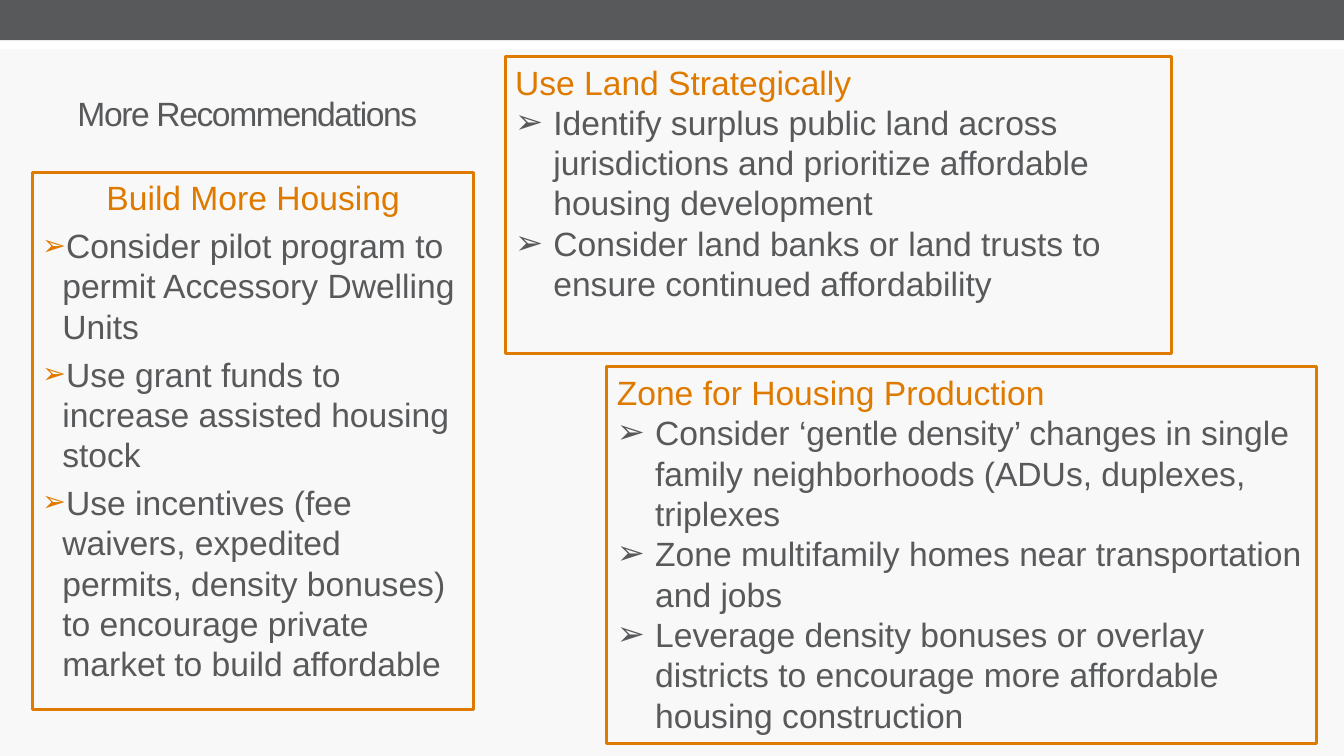
from lxml import etree
from pptx import Presentation
from pptx.dml.color import RGBColor
from pptx.enum.shapes import MSO_SHAPE
from pptx.enum.text import MSO_ANCHOR, PP_ALIGN
from pptx.oxml.ns import qn
from pptx.util import Emu, Inches, Pt

RECT = MSO_SHAPE.RECTANGLE
TOP, MIDDLE = MSO_ANCHOR.TOP, MSO_ANCHOR.MIDDLE
LEFT, CENTER = PP_ALIGN.LEFT, PP_ALIGN.CENTER

GRAY = RGBColor(0x58, 0x59, 0x5B)
ORANGE = RGBColor(0xDF, 0x7A, 0x00)
PALE = RGBColor(0xF8, 0xF8, 0xF8)
WHITE = RGBColor(0xFF, 0xFF, 0xFF)

prs = Presentation()
prs.slide_width, prs.slide_height = Inches(13.33), Inches(7.5)
s = prs.slides.add_slide(prs.slide_layouts[6])
s.background.fill.solid()
s.background.fill.fore_color.rgb = PALE


def add_rect(x, y, w, h, fill, line=None):
    sp = s.shapes.add_shape(RECT, Inches(x), Inches(y), Inches(w), Inches(h))
    sp.shadow.inherit = False
    sp.fill.solid()
    sp.fill.fore_color.rgb = fill
    if line is None:
        sp.line.fill.background()
    else:
        sp.line.color.rgb = line
        sp.line.width = Pt(2.08)
    return sp


def add_text(p, text, color=GRAY, align=LEFT, before=0, spacing=0,
             indent=0, bullet_color=None, bullet_size=100):
    p.alignment = align
    p.space_before = Pt(before)
    r = p.add_run()
    r.text = text
    r.font.name, r.font.size = "Arial", Pt(24)
    r.font.color.rgb = color
    if spacing:
        r.font._element.set("spc", str(spacing * 100))
    if indent:
        pPr = p._p.get_or_add_pPr()
        pPr.set("marL", str(Inches(indent)))
        pPr.set("indent", str(-Inches(indent)))
        if bullet_color is not None:
            clr = etree.SubElement(pPr, qn("a:buClr"))
            etree.SubElement(clr, qn("a:srgbClr"), val=str(bullet_color))
        etree.SubElement(pPr, qn("a:buSzPct"), val=str(bullet_size * 1000))
        etree.SubElement(pPr, qn("a:buFont"), typeface="Arial")
        etree.SubElement(pPr, qn("a:buChar"), char="➢")


# Header bands
add_rect(0, 0.24, 13.33, 0.25, WHITE)
add_rect(0, 0, 13.33, 0.4, GRAY)

# Title
title = s.shapes.add_textbox(Inches(0.67), Inches(0.58), Inches(12), Inches(1.08))
tf = title.text_frame
tf.word_wrap = True
tf.vertical_anchor = MIDDLE
add_text(tf.paragraphs[0], "More Recommendations", spacing=-1)

# Recommendation boxes: position, heading, heading alignment, bullet format, items
tight = dict(indent=0.2, before=5.3, bullet_color=ORANGE, bullet_size=85)
wide = dict(indent=0.38)
boxes = [
    ((0.32, 1.71, 4.38, 5.33), "Build More Housing", CENTER, tight, [
        "Consider pilot program to permit Accessory Dwelling Units",
        "Use grant funds to increase assisted housing stock",
        "Use incentives (fee waivers, expedited permits, density bonuses) "
        "to encourage private market to build affordable"]),
    ((5.01, 0.56, 6.61, 2.95), "Use Land Strategically", LEFT, wide, [
        "Identify surplus public land across jurisdictions and prioritize "
        "affordable housing development",
        "Consider land banks or land trusts to ensure continued affordability"]),
    ((6.02, 3.64, 7.04, 3.74), "Zone for Housing Production", LEFT, wide, [
        "Consider ‘gentle density’ changes in single family neighborhoods "
        "(ADUs, duplexes, triplexes",
        "Zone multifamily homes near transportation and jobs",
        "Leverage density bonuses or overlay districts to encourage more "
        "affordable housing construction"]),
]
for place, heading, align, bullet, items in boxes:
    tf = add_rect(*place, PALE, ORANGE).text_frame
    tf.word_wrap = True
    tf.vertical_anchor = TOP
    add_text(tf.paragraphs[0], heading, color=ORANGE, align=align)
    for item in items:
        add_text(tf.add_paragraph(), item, **bullet)

prs.save("out.pptx")
